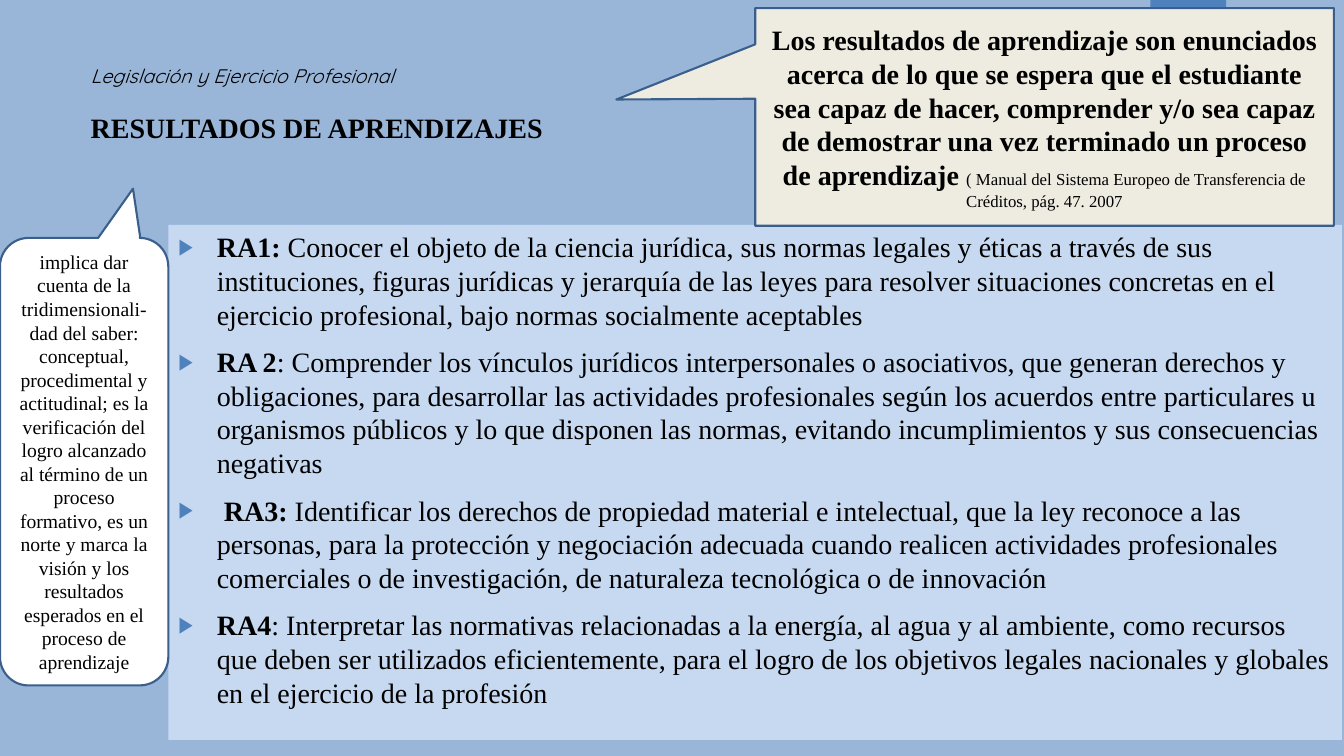
from dataclasses import dataclass

from lxml.etree import SubElement
from pptx import Presentation
from pptx.dml.color import RGBColor
from pptx.enum.shapes import MSO_SHAPE as Shape
from pptx.enum.text import MSO_ANCHOR as Anchor, MSO_AUTO_SIZE as AutoSize, PP_ALIGN as Align
from pptx.oxml.ns import qn
from pptx.util import Inches, Pt

WIDTH, HEIGHT = Inches(13.33), Inches(7.5)
SERIF, ROUNDED = "Times New Roman", "Quicksand"
BLACK, ACCENT, OUTLINE = "000000", "4F81BD", "3A5F8C"


@dataclass
class Area:
    """A rectangle in percent of the slide's width and height."""
    left: float
    top: float
    width: float
    height: float

    def bounds(self) -> tuple[int, int, int, int]:
        """Return left, top, width and height as lengths."""
        return (int(WIDTH * self.left / 100), int(HEIGHT * self.top / 100),
                int(WIDTH * self.width / 100), int(HEIGHT * self.height / 100))


@dataclass
class Span:
    """A stretch of text in one size and weight."""
    text: str
    size: float = 20
    bold: bool = False


@dataclass
class Callout:
    """A speech balloon with centred text."""
    kind: Shape
    area: Area
    adjustments: list[float]
    fill: str
    spans: list[Span]


TITLE_AREA = Area(6, 7.73, 77.19, 20.4)
OUTCOMES_AREA = Area(12.53, 29.73, 87.32, 68.13)
RIBBON_AREA = Area(85.6, 0, 5.63, 16.67)

OUTCOMES = [
    ("RA1:", " Conocer el objeto de la ciencia jurídica, sus normas legales y éticas a través de "
     "sus instituciones, figuras jurídicas y jerarquía de las leyes para resolver situaciones "
     "concretas en el ejercicio profesional, bajo normas socialmente aceptables"),
    ("RA 2", ": Comprender los vínculos jurídicos interpersonales o asociativos, que generan "
     "derechos y obligaciones, para desarrollar las actividades profesionales según los acuerdos "
     "entre particulares u organismos públicos y lo que disponen las normas, evitando "
     "incumplimientos y sus consecuencias negativas"),
    (" RA3:", " Identificar los derechos de propiedad material e intelectual, que la ley reconoce "
     "a las personas, para la protección y negociación adecuada cuando realicen actividades "
     "profesionales comerciales o de investigación, de naturaleza tecnológica o de innovación"),
    ("RA4", ": Interpretar las normativas relacionadas a la energía, al agua y al ambiente, como "
     "recursos que deben ser utilizados eficientemente, para el logro de los objetivos legales "
     "nacionales y globales en el ejercicio de la profesión"),
]

CALLOUTS = [
    Callout(Shape.RECTANGULAR_CALLOUT, Area(56.19, 1.07, 43.06, 28.8), [-0.74, -0.08], "EEECE1", [
        Span("Los resultados de aprendizaje son enunciados acerca de lo que se espera que el "
             "estudiante sea capaz de hacer, comprender y/o sea capaz de demostrar una vez "
             "terminado un proceso de aprendizaje ", bold=True),
        Span("( Manual del Sistema Europeo de Transferencia de Créditos, pág. 47. 2007", 12)]),
    Callout(Shape.ROUNDED_RECTANGULAR_CALLOUT, Area(0, 31.47, 12.53, 59.2), [0.29, -0.61, 0.17],
            "FFFFFF", [
        Span("implica dar cuenta de la tridimensionali-dad del saber: conceptual, procedimental y "
             "actitudinal; es la verificación del logro alcanzado al término de un proceso "
             "formativo, es un norte y marca la visión y los resultados esperados en el proceso "
             "de aprendizaje", 14)]),
]


def color(value: str) -> RGBColor:
    """Turn a hex string into a colour."""
    return RGBColor.from_string(value)


def paint(target, value: str) -> None:
    """Give a shape or background a solid fill."""
    target.fill.solid()
    target.fill.fore_color.rgb = color(value)


def place(box, area: Area, anchor: Anchor) -> None:
    """Move a box to its area and set up its text frame."""
    box.left, box.top, box.width, box.height = area.bounds()
    frame = box.text_frame
    frame.word_wrap = True
    frame.auto_size = AutoSize.NONE
    frame.vertical_anchor = anchor


def style(para, align: Align, before: float = 0, name: str = SERIF) -> None:
    """Set the alignment, spacing and shared font of a paragraph."""
    para.alignment = align
    para.space_before = Pt(before)
    para.font.name = name
    para.font.color.rgb = color(BLACK)


def write(para, spans: list[Span]) -> None:
    """Add spans to a paragraph, sharing the font size where all agree."""
    sizes = {span.size for span in spans}
    if len(sizes) == 1:
        para.font.size = Pt(sizes.pop())
    for span in spans:
        run = para.add_run()
        run.text = span.text
        run.font.bold = span.bold
        if sizes:
            run.font.size = Pt(span.size)


def add_bullet(para) -> None:
    """Give a paragraph a hanging indent and a triangular bullet."""
    properties = para._p.get_or_add_pPr()
    indent = Inches(0.38)
    properties.set("marL", str(indent))
    properties.set("indent", str(-indent))
    SubElement(SubElement(properties, qn("a:buClr")), qn("a:srgbClr"), val=ACCENT)
    SubElement(properties, qn("a:buSzPct"), val="80000")
    SubElement(properties, qn("a:buFont"), typeface="Arial")
    SubElement(properties, qn("a:buChar"), char="▶")


def add_ribbon(page) -> None:
    """Draw the ribbon at the top edge."""
    ribbon = page.shapes.add_shape(Shape.RECTANGLE, *RIBBON_AREA.bounds())
    ribbon.shadow.inherit = False
    paint(ribbon, ACCENT)
    ribbon.line.fill.background()


def fill_title(title) -> None:
    """Write the course name and the heading."""
    place(title, TITLE_AREA, Anchor.TOP)
    course = title.text_frame.paragraphs[0]
    style(course, Align.LEFT, name=ROUNDED)
    course.font.italic = True
    write(course, [Span("Legislación y Ejercicio Profesional", 14)])
    heading = title.text_frame.add_paragraph()
    style(heading, Align.LEFT, before=17)
    write(heading, [Span("RESULTADOS DE APRENDIZAJES", bold=True)])


def fill_outcomes(body) -> None:
    """Write the list of learning outcomes."""
    place(body, OUTCOMES_AREA, Anchor.TOP)
    paint(body, "C6D9F1")
    frame = body.text_frame
    for index, (label, text) in enumerate(OUTCOMES):
        para = frame.add_paragraph() if index else frame.paragraphs[0]
        add_bullet(para)
        style(para, Align.LEFT, before=10 if index else 0)
        write(para, [Span(label, bold=True), Span(text)])


def add_callout(page, callout: Callout) -> None:
    """Draw a callout with its text."""
    balloon = page.shapes.add_shape(callout.kind, *callout.area.bounds())
    for index, value in enumerate(callout.adjustments):
        balloon.adjustments[index] = value
    balloon.shadow.inherit = False
    paint(balloon, callout.fill)
    balloon.line.color.rgb = color(OUTLINE)
    balloon.line.width = Pt(1.5)
    place(balloon, callout.area, Anchor.MIDDLE)
    para = balloon.text_frame.paragraphs[0]
    style(para, Align.CENTER)
    write(para, callout.spans)


def main() -> None:
    """Build the slide and save it."""
    deck = Presentation()
    deck.slide_width, deck.slide_height = WIDTH, HEIGHT
    page = deck.slides.add_slide(deck.slide_layouts[1])
    paint(page.background, "99B6D9")
    add_ribbon(page)
    fill_title(page.shapes.title)
    fill_outcomes(page.placeholders[1])
    for callout in CALLOUTS:
        add_callout(page, callout)
    deck.save("out.pptx")


if __name__ == "__main__":
    main()
